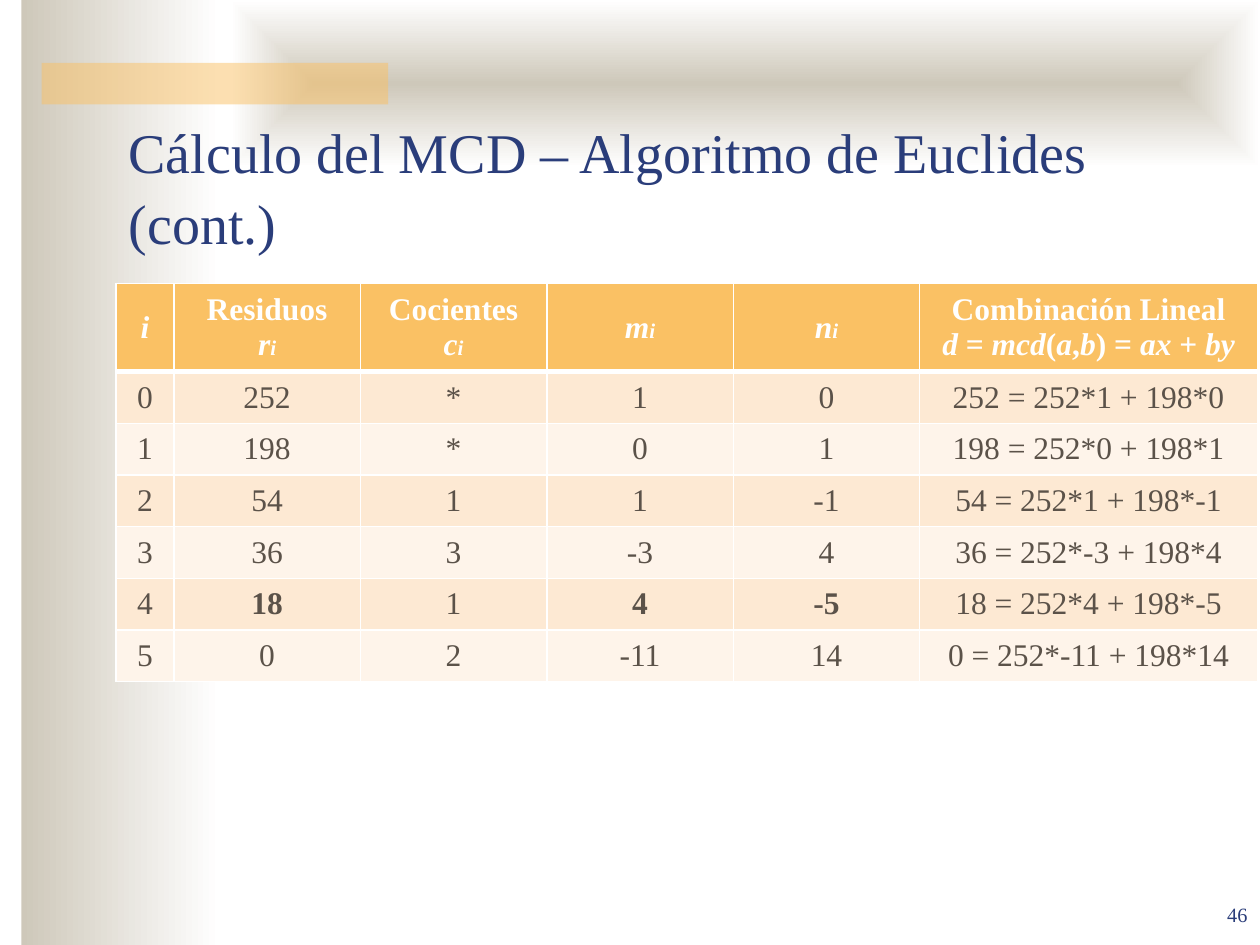
from dataclasses import dataclass

from lxml.etree import SubElement
from pptx import Presentation
from pptx.dml.color import RGBColor
from pptx.enum.shapes import MSO_SHAPE
from pptx.enum.text import MSO_ANCHOR, PP_ALIGN
from pptx.oxml.ns import qn
from pptx.util import Inches, Pt


@dataclass(frozen=True)
class Theme:
    font: str = "Times New Roman"
    navy: str = "2A3D7A"
    stone: str = "CEC8BA"
    white: str = "FFFFFF"
    amber: str = "FAC164"
    ink: str = "5B5249"
    bands: tuple[str, str] = ("FDE9D3", "FEF4EA")
    title: int = 32
    text: int = 18
    index: int = 12
    number: int = 20


@dataclass(frozen=True)
class Run:
    text: str
    italic: bool = False
    size: int = Theme.text


@dataclass(frozen=True)
class Step:
    residue: int
    quotient: str
    m: int
    n: int


A, B, GCD = 252, 198, 18
STEPS = [
    Step(252, "*", 1, 0),
    Step(198, "*", 0, 1),
    Step(54, "1", 1, -1),
    Step(36, "3", -3, 4),
    Step(18, "1", 4, -5),
    Step(0, "2", -11, 14),
]
COLS = [0.46, 1.48, 1.48, 1.48, 1.48, 2.68]
HEAD_H, ROW_H = 0.7, 0.41
T = Theme()


def rgb(color: str) -> RGBColor:
    return RGBColor.from_string(color)


def style(font, size: int, color: str, bold: bool = False) -> None:
    font.name, font.size, font.bold = T.font, Pt(size), bold
    font.color.rgb = rgb(color)


def add_rect(shapes, left: float, top: float, width: float, height: float):
    sp = shapes.add_shape(MSO_SHAPE.RECTANGLE, Inches(left), Inches(top),
                          Inches(width), Inches(height))
    sp.shadow.inherit = False
    sp.line.fill.background()
    return sp


def fade(sp, from_center: bool = False) -> None:
    """Fade from stone to white, left to right or from the center outwards."""
    sp.fill.gradient()
    sp.fill.gradient_angle = 0
    for stop, color in zip(sp.fill.gradient_stops, (T.stone, T.white)):
        stop.color.rgb = rgb(color)
    if from_center:
        grad = sp._element.spPr.find(qn("a:gradFill"))
        lin = grad.find(qn("a:lin"))
        rect = SubElement(grad, qn("a:path"), {"path": "shape"})
        SubElement(rect, qn("a:fillToRect"), dict.fromkeys("ltrb", "50000"))
        grad.remove(lin)


def add_background(shapes) -> None:
    fade(add_rect(shapes, 0.17, 0, 1.58, 7.5))
    fade(add_rect(shapes, 1.83, 0, 8.17, 1.33), from_center=True)
    bar = add_rect(shapes, 0.33, 0.5, 2.75, 0.33)
    bar.fill.solid()
    bar.fill.fore_color.rgb = rgb(T.amber)
    color = bar._element.spPr.find(qn("a:solidFill"))[0]
    SubElement(color, qn("a:alpha"), {"val": "50000"})


def set_borders(cell, top: float, bottom: float) -> None:
    tcPr = cell._tc.get_or_add_tcPr()
    for side, width in (("L", 1), ("R", 1), ("T", top), ("B", bottom)):
        ln = SubElement(tcPr, qn(f"a:ln{side}"), {"w": str(Pt(width))})
        fill = SubElement(ln, qn("a:solidFill"))
        SubElement(fill, qn("a:srgbClr"), {"val": T.white})


def fill_cell(cell, lines: list[list[Run]], fill: str, color: str,
              bold: bool, top: float = 1, bottom: float = 1) -> None:
    set_borders(cell, top, bottom)
    cell.fill.solid()
    cell.fill.fore_color.rgb = rgb(fill)
    cell.vertical_anchor = MSO_ANCHOR.MIDDLE
    tf = cell.text_frame
    for i, runs in enumerate(lines):
        p = tf.add_paragraph() if i else tf.paragraphs[0]
        p.alignment = PP_ALIGN.CENTER
        for run in runs:
            r = p.add_run()
            r.text = run.text
            style(r.font, run.size, color, bold)
            r.font.italic = run.italic


def indexed(letter: str) -> list[Run]:
    return [Run(letter, True), Run("i", True, T.index)]


def header() -> list[list[list[Run]]]:
    formula = ["d", " = ", "mcd", "(", "a", ",", "b", ") = ", "ax", " + ", "by"]
    return [
        [[Run("i", True)]],
        [[Run("Residuos")], indexed("r")],
        [[Run("Cocientes")], indexed("c")],
        [indexed("m")],
        [indexed("n")],
        [[Run("Combinación Lineal")],
         [Run(text, i % 2 == 0) for i, text in enumerate(formula)]],
    ]


def add_steps_table(shapes) -> None:
    table = shapes.add_table(
        len(STEPS) + 1, len(COLS), Inches(0.92), Inches(2.25),
        Inches(sum(COLS)), Inches(HEAD_H + ROW_H * len(STEPS))).table
    for col, width in zip(table.columns, COLS):
        col.width = Inches(width)
    for i, row in enumerate(table.rows):
        row.height = Inches(ROW_H if i else HEAD_H)

    for j, lines in enumerate(header()):
        fill_cell(table.cell(0, j), lines, T.amber, T.white, True, bottom=3)
    for i, s in enumerate(STEPS):
        values = [i, s.residue, s.quotient, s.m, s.n,
                  f"{s.residue} = {A}*{s.m} + {B}*{s.n}"]
        for j, value in enumerate(values):
            fill_cell(table.cell(i + 1, j), [[Run(str(value))]], T.bands[i % 2],
                      T.ink, bold=s.residue == GCD and j in (1, 3, 4),
                      top=1 if i else 3)


def set_title(slide) -> None:
    title = slide.shapes.title
    title.left, title.top = Inches(0.92), Inches(0.58)
    title.width, title.height = Inches(9.08), Inches(1.5)
    tf = title.text_frame
    tf.text = "Cálculo del MCD – Algoritmo de Euclides (cont.)"
    tf.word_wrap = True
    tf.vertical_anchor = MSO_ANCHOR.BOTTOM
    tf.margin_right = Inches(0.15)
    p = tf.paragraphs[0]
    p.alignment = PP_ALIGN.LEFT
    p.line_spacing = 1.05
    style(p.font, T.title, T.navy)
    # Bring the title in front of the background
    slide.shapes._spTree.append(title._element)


def add_slide_number(shapes, number: int) -> None:
    tf = shapes.add_textbox(Inches(9), Inches(7.01), Inches(1), Inches(0.5)).text_frame
    tf.word_wrap = True
    tf.vertical_anchor = MSO_ANCHOR.BOTTOM
    p = tf.paragraphs[0]
    p.alignment = PP_ALIGN.RIGHT
    r = p.add_run()
    r.text = str(number)
    style(r.font, T.number, T.navy)
    r._r.get_or_add_rPr().set("baseline", "30000")


def main() -> None:
    prs = Presentation()
    prs.slide_width, prs.slide_height = Inches(10), Inches(7.5)
    slide = prs.slides.add_slide(prs.slide_layouts[5])
    add_background(slide.shapes)
    set_title(slide)
    add_steps_table(slide.shapes)
    add_slide_number(slide.shapes, 46)
    prs.save("out.pptx")


if __name__ == "__main__":
    main()
